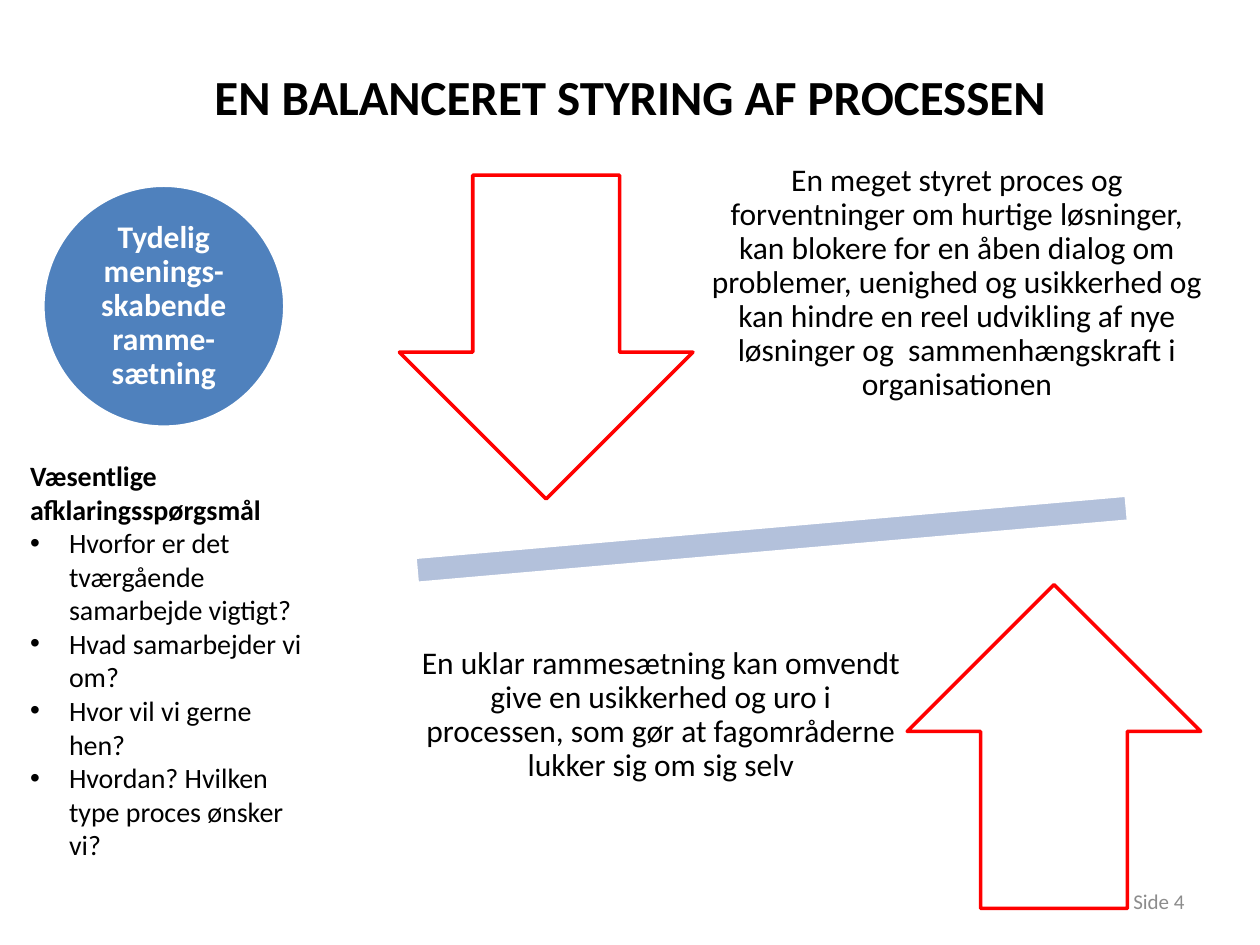
from lxml import etree
from pptx import Presentation
from pptx.dml.color import RGBColor
from pptx.enum.shapes import MSO_SHAPE
from pptx.enum.text import MSO_ANCHOR, PP_ALIGN
from pptx.oxml.ns import qn
from pptx.util import Inches, Pt

BLACK = RGBColor(0x00, 0x00, 0x00)
WHITE = RGBColor(0xFF, 0xFF, 0xFF)
RED = RGBColor(0xFF, 0x00, 0x00)
BLUE = RGBColor(0x4F, 0x81, 0xBD)
PALE_BLUE = RGBColor(0xB3, 0xC1, 0xDB)
GREY = RGBColor(0x8C, 0x8C, 0x8C)
LEFT, CENTER, RIGHT = PP_ALIGN.LEFT, PP_ALIGN.CENTER, PP_ALIGN.RIGHT
TOP, MIDDLE = MSO_ANCHOR.TOP, MSO_ANCHOR.MIDDLE
ELLIPSE, MINUS = MSO_SHAPE.OVAL, MSO_SHAPE.MATH_MINUS
DOWN_ARROW, UP_ARROW = MSO_SHAPE.DOWN_ARROW, MSO_SHAPE.UP_ARROW
FONT = "Calibri"
TITLE_ONLY = 5


def inches(box):
    return [Inches(length) for length in box]


def write(frame, text, size=18, color=BLACK, bold=False, align=CENTER,
          spacing=1.0, bullet=None, indent=0.31, append=False):
    paragraph = frame.add_paragraph() if append else frame.paragraphs[0]
    paragraph.text = text
    paragraph.alignment = align
    paragraph.line_spacing = spacing
    if bullet:
        properties = paragraph._p.get_or_add_pPr()
        properties.set("marL", str(Inches(indent)))
        properties.set("indent", str(-Inches(indent)))
        bullet_font = etree.SubElement(properties, qn("a:buFont"))
        bullet_font.set("typeface", "Arial")
        etree.SubElement(properties, qn("a:buChar")).set("char", bullet)
    font = paragraph.font
    font.name, font.size, font.bold = FONT, Pt(size), bold
    font.color.rgb = color


def set_frame(frame, anchor=MIDDLE, inset=None):
    frame.word_wrap = True
    frame.vertical_anchor = anchor
    if inset is not None:
        frame.margin_left = frame.margin_right = Inches(inset)
        frame.margin_top = frame.margin_bottom = Inches(inset)
    return frame


def add_text_frame(slide, box, **layout):
    return set_frame(slide.shapes.add_textbox(*inches(box)).text_frame, **layout)


def add_figure(slide, kind, box, fill=None, line=WHITE):
    figure = slide.shapes.add_shape(kind, *inches(box))
    figure.shadow.inherit = False
    if fill is None:
        figure.fill.background()
    else:
        figure.fill.solid()
        figure.fill.fore_color.rgb = fill
    figure.line.color.rgb = line
    figure.line.width = Pt(2)
    return figure


def add_title(slide, box):
    title = slide.shapes.title
    title.left, title.top, title.width, title.height = inches(box)
    write(set_frame(title.text_frame), "EN BALANCERET STYRING AF PROCESSEN",
          size=28, bold=True)


def add_balance(slide, box):
    left, top, width, height = box
    arrow_width, arrow_height = 2.33, 2.57
    beam = add_figure(slide, MINUS, (left - 0.9, top + 2.45, 7.71, 0.88), fill=PALE_BLUE)
    beam.rotation = 355
    add_figure(slide, DOWN_ARROW, (left, top, arrow_width, arrow_height), line=RED)
    add_figure(slide, UP_ARROW,
               (left + width - arrow_width, top + height - arrow_height,
                arrow_width, arrow_height), line=RED)
    messages = [
        ((left + 2.3, top - 0.32, 4.25, 2.36),
         "En meget styret proces og forventninger om hurtige løsninger, kan "
         "blokere for en åben dialog om problemer, uenighed og usikkerhed og "
         "kan hindre en reel udvikling af nye løsninger og  sammenhængskraft "
         "i organisationen"),
        ((left + 0.02, top + 3.62, 4.11, 1.34),
         "En uklar rammesætning kan omvendt give en usikkerhed og uro i "
         "processen, som gør at fagområderne lukker sig om sig selv"),
    ]
    for message_box, message in messages:
        write(add_text_frame(slide, message_box, inset=0.14), message, spacing=0.9)


def add_framing(slide, box):
    circle = add_figure(slide, ELLIPSE, box, fill=BLUE)
    write(set_frame(circle.text_frame, inset=0.01),
          "Tydelig menings-skabende ramme-sætning",
          color=WHITE, bold=True, spacing=0.9)


def add_questions(slide, box):
    frame = add_text_frame(slide, box, anchor=TOP)
    write(frame, "Væsentlige afklaringsspørgsmål", size=16, bold=True, align=LEFT)
    for question in (
        "Hvorfor er det tværgående samarbejde vigtigt?",
        "Hvad samarbejder vi om?",
        "Hvor vil vi gerne hen?",
        "Hvordan? Hvilken type proces ønsker vi?",
    ):
        write(frame, question, size=16, align=LEFT, bullet="•", append=True)


def add_page_number(slide, box):
    write(add_text_frame(slide, box), "Side 4", size=12, color=GREY, align=RIGHT)


def main():
    presentation = Presentation()
    presentation.slide_width, presentation.slide_height = Inches(10), Inches(7.5)
    slide = presentation.slides.add_slide(presentation.slide_layouts[TITLE_ONLY])
    add_title(slide, (0.5, 0.3, 9, 0.93))
    add_balance(slide, (3.17, 1.39, 6.36, 5.82))
    add_page_number(slide, (7.17, 6.95, 2.33, 0.4))
    add_framing(slide, (0.34, 1.47, 1.92, 1.92))
    add_questions(slide, (0.14, 3.59, 2.36, 3.64))
    presentation.save("out.pptx")


if __name__ == "__main__":
    main()
